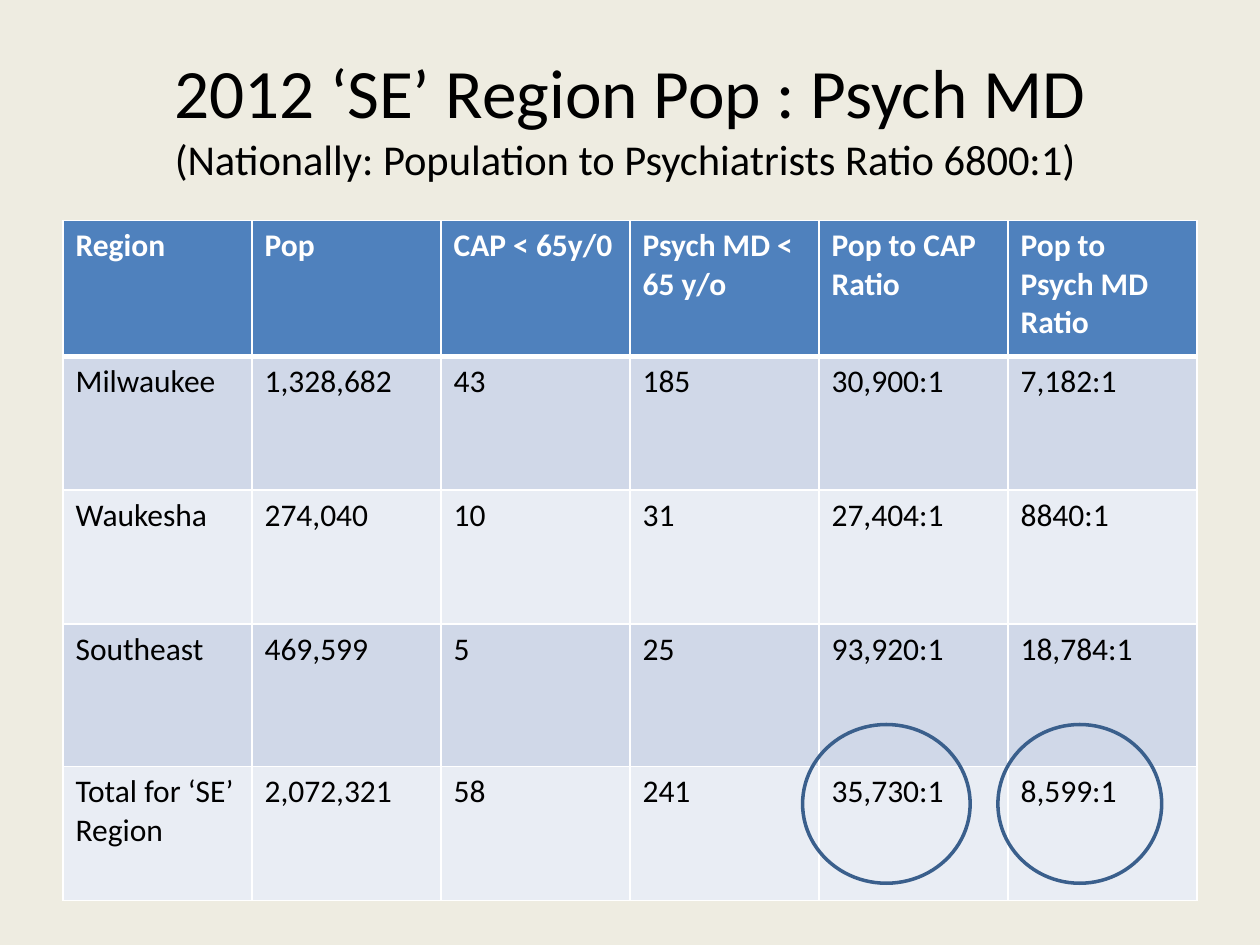
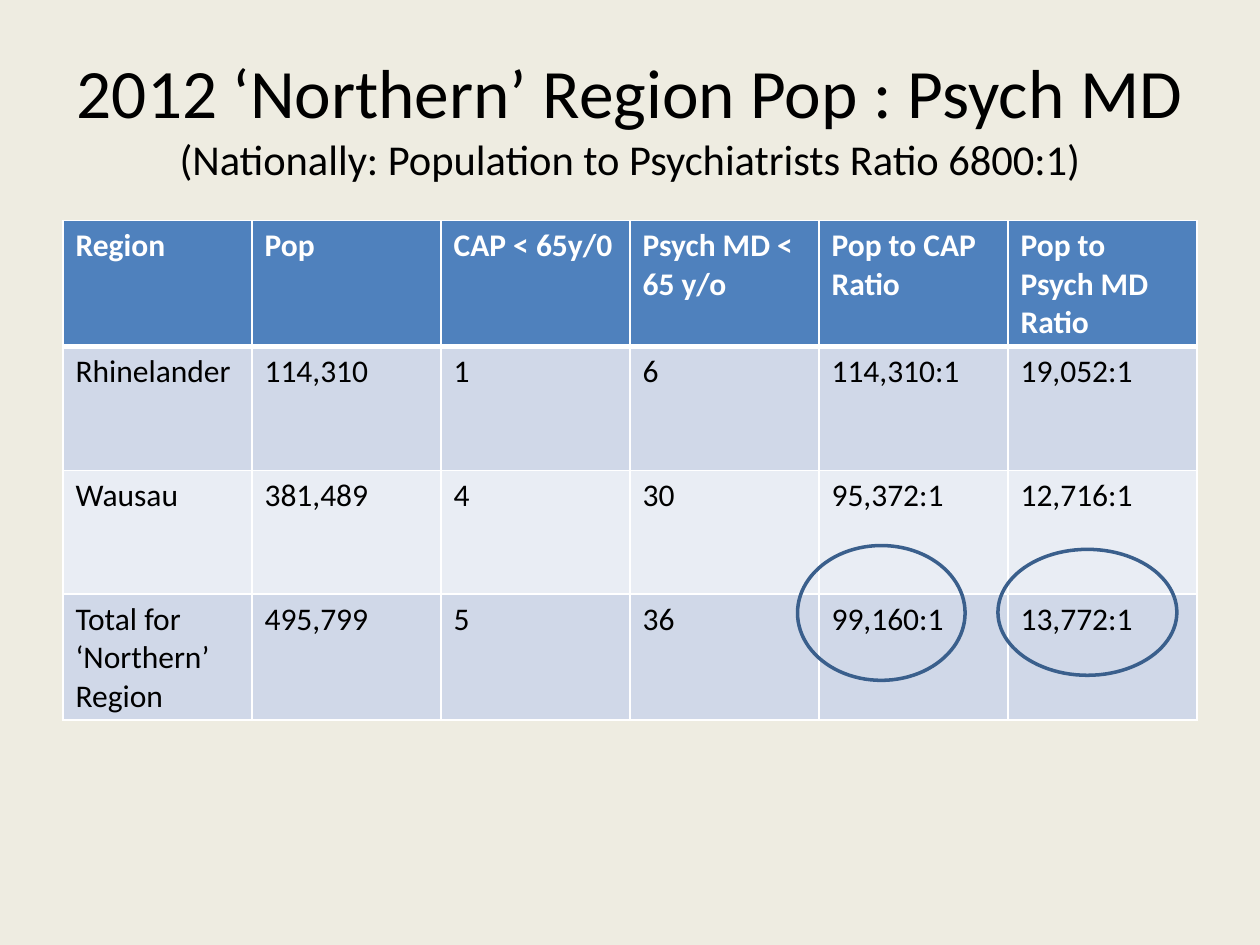
import pptx
import pptx.util
import pptx.dml.color
import pptx.enum.shapes
import pptx.enum.text
import pptx.oxml
import pptx.oxml.ns

# Shared look
COLOURS = {
    "background": "EEECE1", "text": "000000", "white": "FFFFFF",
    "header": "4F81BD", "odd": "D0D8E8", "even": "E9EDF4", "ring": "3A5F8C",
}
FORMATS = {
    "title": {"size": pptx.util.Pt(39.6), "bold": False},
    "subtitle": {"size": pptx.util.Pt(24.3), "bold": False},
    "header": {"size": pptx.util.Pt(18), "bold": True},
    "body": {"size": pptx.util.Pt(18), "bold": False},
}
HEADINGS = ["Region", "Pop", "CAP < 65y/0", "Psych MD < 65 y/o",
            "Pop to CAP Ratio", "Pop to Psych MD Ratio"]
SUBTITLE = "(Nationally: Population to Psychiatrists Ratio 6800:1)"

# Slide contents; row heights and rings (left, top, width, height) in percent of the slide
REGIONS = [
    {
        "title": "2012 ‘SE’ Region Pop : Psych MD",
        "subtitle": SUBTITLE + " ",
        "rows": [
            ["Milwaukee", "1,328,682", "43", "185", "30,900:1", "7,182:1"],
            ["Waukesha", "274,040", "10", "31", "27,404:1", "8840:1"],
            ["Southeast", "469,599", "5", "25", "93,920:1", "18,784:1"],
            ["Total for ‘SE’\nRegion", "2,072,321", "58", "241", "35,730:1", "8,599:1"],
        ],
        "heights": [14.4, 14.15, 14.15, 15.1, 14.15],
        "rings": [(63.7, 76.67, 13.3, 16.8), (79.2, 76.67, 13, 16.8)],
    },
    {
        "title": "2012 ‘Northern’ Region Pop : Psych MD",
        "subtitle": SUBTITLE,
        "rows": [
            ["Rhinelander", "114,310", "1", "6", "114,310:1", "19,052:1"],
            ["Wausau", "381,489", "4", "30", "95,372:1", "12,716:1"],
            ["Total for ‘Northern’\nRegion", "495,799", "5", "36", "99,160:1", "13,772:1"],
        ],
        "heights": [13.1] * 4,
        "rings": [(63.3, 57.73, 13.3, 14.27), (79.2, 58.13, 14.2, 13.33)],
    },
]

deck = pptx.Presentation()
deck.slide_width = pptx.util.Inches(10)
deck.slide_height = pptx.util.Inches(7.5)


def area(left, top, width, height):
    """Turn percentages of the slide into lengths."""
    across, down = deck.slide_width / 100, deck.slide_height / 100
    return [round(left * across), round(top * down), round(width * across), round(height * down)]


def add_span(para, text, style, colour):
    span = para.add_run()
    span.text = text
    span.font.name = "Calibri"
    span.font.color.rgb = pptx.dml.color.RGBColor.from_string(COLOURS[colour])
    for key, value in FORMATS[style].items():
        setattr(span.font, key, value)


for region in REGIONS:
    page = deck.slides.add_slide(deck.slide_layouts[6])
    page.background.fill.solid()
    page.background.fill.fore_color.rgb = pptx.dml.color.RGBColor.from_string(COLOURS["background"])

    # Title with the national ratio below it
    box = page.shapes.add_textbox(*area(5, 4, 90, 16.67))
    box.text_frame.word_wrap = True
    box.text_frame.vertical_anchor = pptx.enum.text.MSO_ANCHOR.MIDDLE
    para = box.text_frame.paragraphs[0]
    para.alignment = pptx.enum.text.PP_ALIGN.CENTER
    add_span(para, region["title"], "title", "text")
    para.add_line_break()
    add_span(para, region["subtitle"], "subtitle", "text")

    # Ratio table
    rows = [HEADINGS] + region["rows"]
    frame = page.shapes.add_table(len(rows), len(HEADINGS),
                                  *area(5, 23.33, 90, sum(region["heights"])))
    table = frame.table
    for row_number, values in enumerate(rows):
        table.rows[row_number].height = area(0, 0, 0, region["heights"][row_number])[3]
        style = "body" if row_number else "header"
        colour = "text" if row_number else "white"
        fill = ("even", "odd")[row_number % 2] if row_number else "header"
        for column_number, value in enumerate(values):
            cell = table.cell(row_number, column_number)

            # White borders, with a thick rule below the header
            properties = cell._tc.get_or_add_tcPr()
            for side in "LRTB":
                thick = (row_number, side) in [(0, "B"), (1, "T")]
                properties.append(pptx.oxml.parse_xml(
                    f'<a:ln{side} {pptx.oxml.ns.nsdecls("a")} w="{pptx.util.Pt(3 if thick else 1)}">'
                    f'<a:solidFill><a:srgbClr val="{COLOURS["white"]}"/></a:solidFill></a:ln{side}>'))
            cell.fill.solid()
            cell.fill.fore_color.rgb = pptx.dml.color.RGBColor.from_string(COLOURS[fill])

            for line_number, line in enumerate(value.split("\n")):
                text = cell.text_frame
                para = text.add_paragraph() if line_number else text.paragraphs[0]
                add_span(para, line, style, colour)

    # Rings around the total ratios
    for place in region["rings"]:
        ring = page.shapes.add_shape(pptx.enum.shapes.MSO_SHAPE.OVAL, *area(*place))
        ring.shadow.inherit = False
        ring.fill.background()
        ring.line.color.rgb = pptx.dml.color.RGBColor.from_string(COLOURS["ring"])
        ring.line.width = pptx.util.Pt(2)

deck.save("out.pptx")
